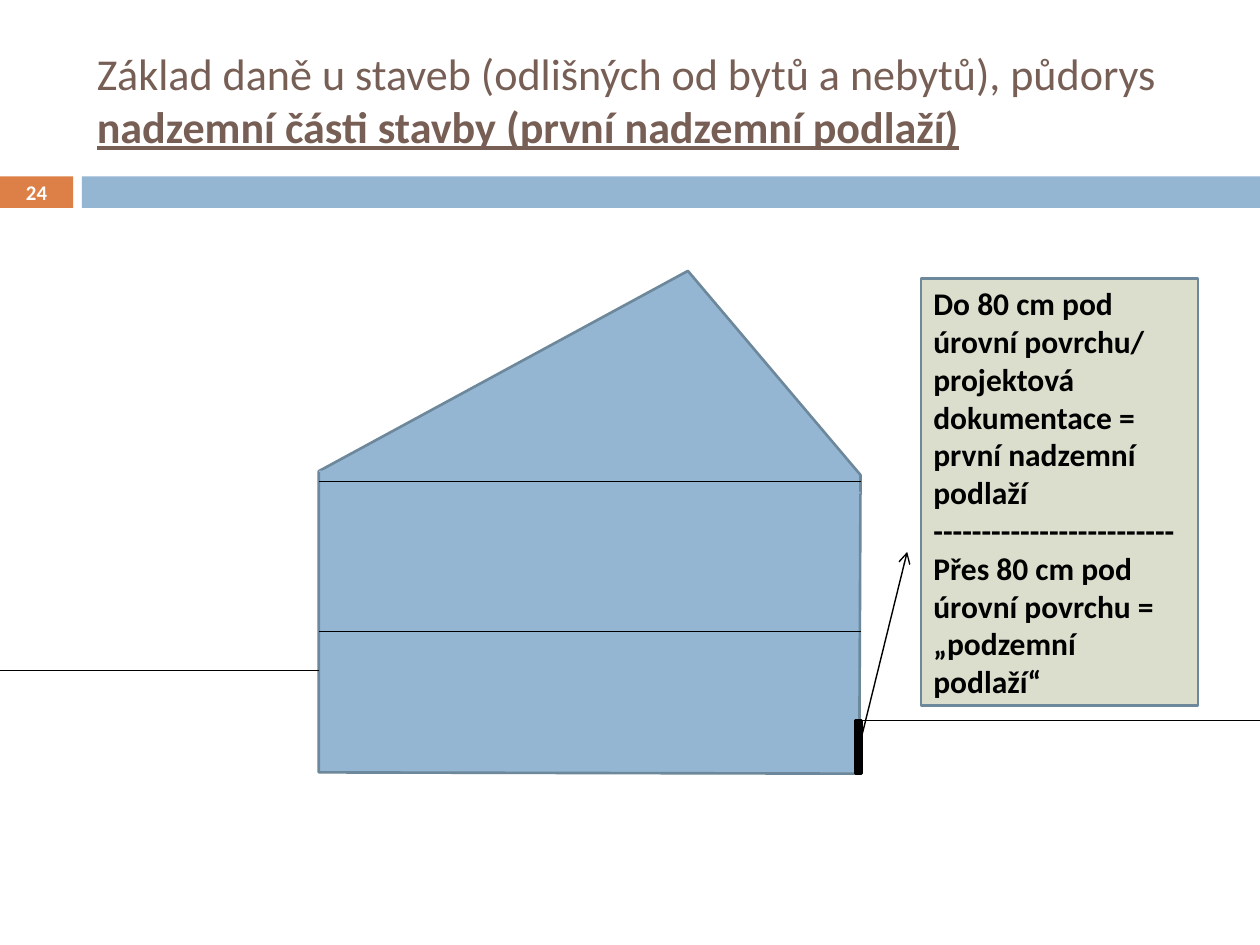
from dataclasses import dataclass

from lxml.etree import SubElement
from pptx import Presentation
from pptx.dml.color import RGBColor
from pptx.enum.shapes import MSO_CONNECTOR, MSO_SHAPE
from pptx.enum.text import MSO_ANCHOR as Anchor, PP_ALIGN as Align
from pptx.oxml.ns import qn
from pptx.util import Inches, Pt

# Grid of 100 columns by 75 rows
CELL = Inches(0.1)
COLS, ROWS = 100, 75

BLUE, BLUE_EDGE = "94B6D2", "6D879B"
ORANGE, BROWN, SAGE = "DD8047", "775F55", "DBDDCD"
BLACK, WHITE = "000000", "FFFFFF"
FONT = "Calibri"

# Levels and walls of the house
WALL_LEFT, WALL_RIGHT = 25.3, 68.3
EAVES, CEILING, FLOOR = 37.4, 38.2, 50.1
GROUND_LEFT, GROUND_RIGHT, BASE = 53.2, 57.2, 61.4
BAND_TOP, BAND_HEIGHT = 14, 2.5


@dataclass(frozen=True)
class Box:
    col: float
    row: float
    cols: float
    rows: float

    def emu(self) -> list[int]:
        return [grid(n) for n in (self.col, self.row, self.cols, self.rows)]


@dataclass(frozen=True)
class Line:
    start: tuple[float, float]
    end: tuple[float, float]
    color: str = BLACK
    arrow: bool = False


def grid(cells: float) -> int:
    return round(cells * CELL)


def rgb(color: str) -> RGBColor:
    return RGBColor.from_string(color)


def paint(shape, fill: str, edge: str | None = None) -> None:
    shape.shadow.inherit = False
    shape.fill.solid()
    shape.fill.fore_color.rgb = rgb(fill)
    if edge:
        shape.line.color.rgb = rgb(edge)
        shape.line.width = Pt(1.5)
    else:
        shape.line.fill.background()


def draw_box(slide, box: Box, fill: str, edge: str | None = None):
    shape = slide.shapes.add_shape(MSO_SHAPE.RECTANGLE, *box.emu())
    paint(shape, fill, edge)
    return shape


def draw_line(slide, line: Line) -> None:
    ends = [grid(n) for n in (*line.start, *line.end)]
    connector = slide.shapes.add_connector(MSO_CONNECTOR.STRAIGHT, *ends)
    connector.line.color.rgb = rgb(line.color)
    connector.line.width = Pt(0.79)
    if line.arrow:
        SubElement(connector.line._get_or_add_ln(), qn("a:tailEnd"), type="arrow")
    SubElement(connector._element.spPr, qn("a:effectLst"))


def write(shape, paragraphs: list[str], size: float, color: str,
          bold: bool | None = True, align=Align.LEFT):
    frame = shape.text_frame
    frame.word_wrap = True
    frame.vertical_anchor = Anchor.MIDDLE
    frame.text = "\n".join(paragraphs)
    for paragraph in frame.paragraphs:
        paragraph.alignment = align
        font = paragraph.font
        font.name, font.size, font.bold = FONT, Pt(size), bold
        font.color.rgb = rgb(color)
    return frame


def draw_header(slide) -> None:
    number = draw_box(slide, Box(0, BAND_TOP, 5.8, BAND_HEIGHT), ORANGE)
    number_frame = write(number, ["24"], 11.9, WHITE, align=Align.CENTER)
    number_frame.margin_top = number_frame.margin_bottom = 0
    draw_box(slide, Box(6.5, BAND_TOP, COLS - 6.5, BAND_HEIGHT), BLUE)

    title = slide.shapes.add_textbox(*Box(6.7, 2.5, 89.2, 10.8).emu())
    title_frame = write(
        title, ["Základ daně u staveb (odlišných od bytů a nebytů), půdorys "],
        25.2, BROWN, bold=None)
    stressed = title_frame.paragraphs[0].add_run()
    stressed.text = "nadzemní části stavby (první nadzemní podlaží)"
    stressed.font.bold = stressed.font.underline = True


def draw_house(slide) -> None:
    outline = [(WALL_LEFT, EAVES), (54.6, 21.5), (WALL_RIGHT, 37.7), (68.2, BASE)]
    builder = slide.shapes.build_freeform(grid(WALL_LEFT), grid(61.3))
    builder.add_line_segments([(grid(x), grid(y)) for x, y in outline], close=True)
    paint(builder.convert_to_shape(), BLUE, BLUE_EDGE)


def main() -> None:
    deck = Presentation()
    deck.slide_width, deck.slide_height = grid(COLS), grid(ROWS)
    slide = deck.slides.add_slide(deck.slide_layouts[6])

    draw_header(slide)
    draw_house(slide)

    # Storeys, ground levels and the pointer to the rule
    for line in (
        Line((WALL_LEFT, EAVES), (WALL_RIGHT, 39.1), BLUE),
        Line((WALL_LEFT, FLOOR), (WALL_RIGHT, FLOOR)),
        Line((WALL_LEFT, CEILING), (WALL_RIGHT, CEILING)),
        Line((WALL_RIGHT, GROUND_RIGHT), (COLS, GROUND_RIGHT)),
        Line((0, GROUND_LEFT), (WALL_LEFT, GROUND_LEFT)),
        Line((WALL_RIGHT, 58.8), (72, 43.8), arrow=True),
    ):
        draw_line(slide, line)

    # Rule for the depth below ground
    rule = draw_box(slide, Box(73.1, 22.1, 22, 33.9), SAGE, BLUE_EDGE)
    write(rule, [
        "Do 80 cm pod úrovní povrchu/ projektová dokumentace = první nadzemní podlaží",
        "-" * 25,
        "Přes 80 cm pod úrovní povrchu = „podzemní podlaží“",
    ], 18, BLACK)

    # Depth mark at the foot of the right wall
    draw_box(slide, Box(67.9, GROUND_RIGHT, 0.5, BASE - GROUND_RIGHT), BLACK, BLACK)

    deck.save("out.pptx")


if __name__ == "__main__":
    main()
